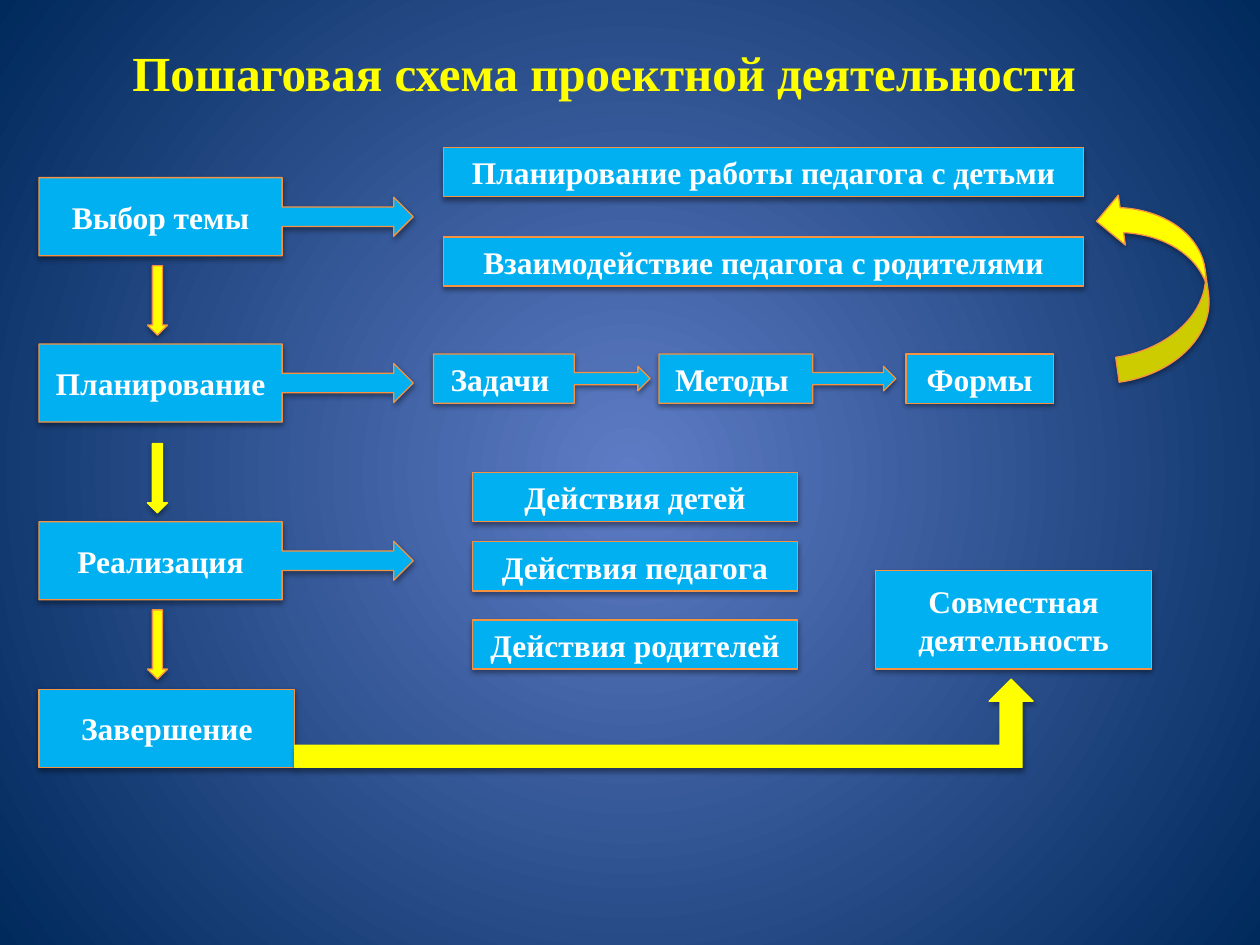
from lxml.etree import SubElement
from pptx import Presentation
from pptx.dml.color import RGBColor
from pptx.enum.shapes import MSO_SHAPE
from pptx.enum.text import MSO_ANCHOR, MSO_AUTO_SIZE, PP_ALIGN
from pptx.oxml import parse_xml
from pptx.oxml.ns import nsdecls, qn
from pptx.util import Inches, Pt

BLUE, YELLOW, ORANGE, WHITE = "00B0F0", "FFFF00", "F69240", "FFFFFF"
SHADOW = f"""<a:effectLst {nsdecls("a")}>
  <a:outerShdw blurRad="{Pt(3.1)}" dist="{Pt(1.6)}" dir="5400000" rotWithShape="0">
    <a:srgbClr val="000000"><a:alpha val="38000"/></a:srgbClr>
  </a:outerShdw>
</a:effectLst>"""
OUTLINE = f"""<a:ln {nsdecls("a")} w="{Pt(0.9)}">
  <a:solidFill><a:srgbClr val="{YELLOW}"/></a:solidFill>
</a:ln>"""


def rgb(value):
    return RGBColor.from_string(value)


class Scheme:
    """Shared style of the scheme and the slide it is drawn on."""

    font = {"name": "Times New Roman", "size": Pt(18), "bold": True}

    def __init__(self, s):
        self.s = s

    def background(self, inner, outer):
        """Fill the slide with a gradient spreading from its centre."""
        fill = self.s.background.fill
        fill.gradient()
        for stop, color, pos in zip(fill.gradient_stops, (inner, outer), (0, 1)):
            stop.color.rgb = rgb(color)
            stop.position = pos
        grad = next(self.s.element.iter(qn("a:gradFill")))
        grad.remove(grad.find(qn("a:lin")))
        circle = SubElement(grad, qn("a:path"), {"path": "circle"})
        SubElement(circle, qn("a:fillToRect"), dict.fromkeys("ltrb", "50000"))

    def add_text(self, tf, text, color, **changes):
        p = tf.paragraphs[0]
        p.alignment = PP_ALIGN.CENTER
        r = p.add_run()
        r.text = text
        for name, value in {**self.font, **changes}.items():
            setattr(r.font, name, value)
        r.font.color.rgb = rgb(color)
        return r

    def shape(self, kind, box, fill, line=ORANGE):
        sp = self.s.shapes.add_shape(kind, *map(Inches, box))
        sp.fill.solid()
        sp.fill.fore_color.rgb = rgb(fill)
        sp.line.color.rgb = rgb(line)
        sp.line.width = Pt(0.75)
        sp.element.spPr.append(parse_xml(SHADOW))
        return sp

    def block(self, text, box, kind=MSO_SHAPE.RECTANGLE):
        tf = self.shape(kind, box, BLUE).text_frame
        tf.word_wrap = True
        tf.vertical_anchor = MSO_ANCHOR.MIDDLE
        self.add_text(tf, text, WHITE)

    def callout(self, text, box):
        self.block(text, box, MSO_SHAPE.RIGHT_ARROW_CALLOUT)

    def arrow(self, kind, box, line=ORANGE, rotation=0):
        self.shape(kind, box, YELLOW, line).rotation = rotation

    def title(self, text, box):
        tf = self.s.shapes.add_textbox(*map(Inches, box)).text_frame
        tf.word_wrap = False
        tf.auto_size = MSO_AUTO_SIZE.SHAPE_TO_FIT_TEXT
        r = self.add_text(tf, text, YELLOW, size=Pt(28))
        r._r.get_or_add_rPr().insert(0, parse_xml(OUTLINE))


def main():
    prs = Presentation()
    prs.slide_width, prs.slide_height = Inches(10), Inches(7.5)
    scheme = Scheme(prs.slides.add_slide(prs.slide_layouts[6]))
    scheme.background("5E7CC5", "00295C")

    for text, top in (("Выбор темы", 1.41), ("Планирование", 2.73), ("Реализация", 4.14)):
        scheme.callout(text, (0.31, top, 2.97, 0.62))
    scheme.block("Завершение", (0.31, 5.47, 2.03, 0.62))
    for top, line in ((2.11, ORANGE), (3.52, YELLOW), (4.84, ORANGE)):
        scheme.arrow(MSO_SHAPE.DOWN_ARROW, (1.17, top, 0.16, 0.55), line)
    scheme.arrow(MSO_SHAPE.BENT_UP_ARROW, (2.34, 5.39, 5.86, 0.7), YELLOW)

    for text, top in (
        ("Планирование работы педагога с детьми", 1.17),
        ("Взаимодействие педагога с родителями", 1.88),
    ):
        scheme.block(text, (3.52, top, 5.08, 0.39))

    scheme.callout("Задачи ", (3.44, 2.81, 1.72, 0.39))
    scheme.callout("Методы ", (5.23, 2.81, 1.88, 0.39))
    scheme.block("Формы", (7.19, 2.81, 1.17, 0.39))
    scheme.arrow(MSO_SHAPE.CURVED_UP_ARROW, (8.43, 1.84, 1.49, 0.8), rotation=262)

    for who, top in (("детей", 3.75), ("педагога", 4.3), ("родителей", 4.92)):
        scheme.block(f"Действия {who}", (3.75, top, 2.58, 0.39))
    scheme.block("Совместная деятельность", (6.95, 4.53, 2.19, 0.78))
    scheme.title("Пошаговая схема проектной деятельности", (0.91, 0.29, 7.77, 0.57))

    prs.save("out.pptx")


if __name__ == "__main__":
    main()
